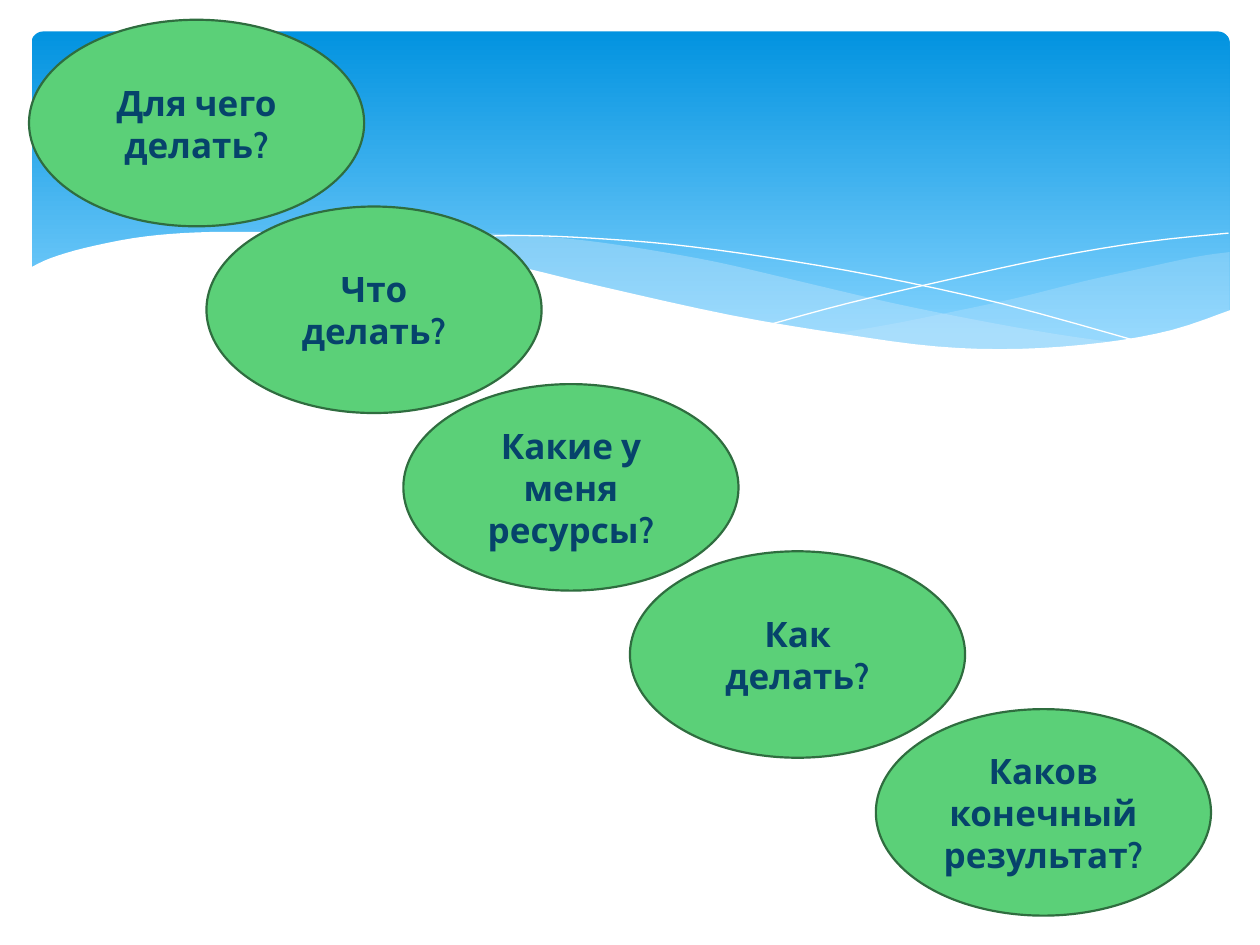
from dataclasses import dataclass
from itertools import chain

from lxml import etree
from pptx import Presentation, util as u
from pptx.dml.color import RGBColor
from pptx.enum import shapes, text
from pptx.oxml.ns import qn

COLORS = {
    "sky_top": "0293E0",
    "sky_bottom": "83D3FE",
    "haze": "C6E7FC",
    "white": "FFFFFF",
    "bubble": "5BD078",
    "outline": "2F6D3F",
    "ink": "06436B",
}
BUBBLE_WIDTH, BUBBLE_HEIGHT = 191.5, 118
CURVE_STEPS = 4

Point = tuple[float, float]
Curve = list[Point]


@dataclass
class Wave:
    curves: list[Curve]
    color: str
    opacity: int = 100


@dataclass
class Question:
    left: float
    top: float
    words: str


WAVES = [
    Wave([
        [(702.7, 144), (682.6, 146.9), (652.3, 153.4), (619.9, 160.6),
         (579.6, 170.6), (542.2, 178.6), (508.3, 185.4), (475.9, 190.8)],
        [(475.9, 190.8), (507.6, 195.1), (545, 198.7), (586.1, 200.2),
         (627.8, 198.7), (662.9, 192.2), (683.3, 185), (702.7, 177.8)],
    ], "haze", 29),
    Wave([
        [(643, 196.6), (602.6, 190.8), (558, 182.9), (508.3, 172.8),
         (452.9, 159.8), (409.7, 149.8), (370, 142.6), (334.8, 137.5),
         (302.4, 134.6), (273.6, 133.2), (247.7, 133.9), (225.4, 136.1), (205.9, 137.5)],
        [(205.9, 137.5), (246.2, 143.3), (290.9, 151.9), (323.3, 159.8),
         (381.6, 172.8), (432.7, 183.6), (478.8, 191.5), (519.8, 197.3),
         (556.6, 199.4), (589, 200.2), (617, 199.4), (643, 196.6)],
    ], "haze", 40),
]
STRANDS = [
    [(222.5, 140.4), (241.2, 137.5), (269.3, 135.4), (299.5, 134.6), (337.7, 136.1),
     (383.8, 139.7), (437.8, 146.9), (500.4, 157.7), (572.4, 173.5), (653, 195.8)],
    [(441.4, 185), (483.8, 173.5), (538.6, 160.6),
     (601.9, 146.9), (654.5, 138.2), (702, 133.2)],
]
FOREGROUND = Wave([
    [(703.4, 177.1), (669.6, 188.6), (630, 195.8), (582.5, 199.4), (535, 198),
     (481, 190.8), (416.9, 180), (342, 163.4), (281.5, 149), (227.5, 139.7),
     (180, 133.9), (139, 132.5), (105.1, 133.2), (76.3, 136.1),
     (48.2, 141.8), (28.8, 147.6), (16.6, 153.4)],
    [(16.6, 236.9), (703.4, 236.9)],
], "white")
QUESTIONS = [
    Question(16.6, 11.3, "Для чего делать?"),
    Question(118, 118, "Что делать?"),
    Question(230.5, 219.5, "Какие у меня ресурсы?"),
    Question(360, 315, "Как делать?"),
    Question(500.5, 405.2, "Каков конечный результат?"),
]


def rgb(name: str) -> RGBColor:
    return RGBColor.from_string(COLORS[name])


def paint(shape, name: str) -> None:
    shape.fill.solid()
    shape.fill.fore_color.rgb = rgb(name)


def smooth(curve: Curve) -> Curve:
    padded = [curve[0], *curve, curve[-1]]
    result = [curve[0]]
    for a, b, c, d in zip(padded, padded[1:], padded[2:], padded[3:]):
        for step in range(1, CURVE_STEPS + 1):
            t = step / CURVE_STEPS
            result.append(tuple(
                q + 0.5 * t * (r - p + t * (2 * p - 5 * q + 4 * r - s + t * (3 * (q - r) + s - p)))
                for p, q, r, s in zip(a, b, c, d)))
    return result


def draw_outline(slide, curves: list[Curve], close: bool):
    points = [(u.Pt(x), u.Pt(y)) for x, y in chain.from_iterable(map(smooth, curves))]
    builder = slide.shapes.build_freeform(*points[0])
    builder.add_line_segments(points[1:], close=close)
    shape = builder.convert_to_shape()
    shape.shadow.inherit = False
    return shape


def draw_wave(slide, wave: Wave) -> None:
    shape = draw_outline(slide, wave.curves, True)
    paint(shape, wave.color)
    shape.line.fill.background()
    if wave.opacity < 100:
        color = shape._element.spPr.find(qn("a:solidFill"))[0]
        etree.SubElement(color, qn("a:alpha")).set("val", str(wave.opacity * 1000))


def draw_strand(slide, curve: Curve) -> None:
    shape = draw_outline(slide, [curve], False)
    shape.fill.background()
    shape.line.color.rgb = rgb("white")
    shape.line.width = u.Pt(0)


def draw_sky(slide) -> None:
    sky = slide.shapes.add_shape(shapes.MSO_SHAPE.ROUNDED_RECTANGLE,
                                 u.Pt(18), u.Pt(18), u.Pt(684.7), u.Pt(194.4))
    sky.adjustments[0] = 0.034
    sky.shadow.inherit = False
    sky.line.fill.background()
    sky.fill.gradient()
    sky.fill.gradient_angle = 270
    stops = zip(sky.fill.gradient_stops, (0, 0.9), ("sky_top", "sky_bottom"))
    for stop, position, name in stops:
        stop.position = position
        stop.color.rgb = rgb(name)


def draw_question(slide, question: Question) -> None:
    bubble = slide.shapes.add_shape(shapes.MSO_SHAPE.OVAL, u.Pt(question.left), u.Pt(question.top),
                                    u.Pt(BUBBLE_WIDTH), u.Pt(BUBBLE_HEIGHT))
    bubble.shadow.inherit = False
    paint(bubble, "bubble")
    bubble.line.color.rgb = rgb("outline")
    bubble.line.width = u.Pt(1.25)
    frame = bubble.text_frame
    frame.text = question.words
    frame.word_wrap = True
    frame.vertical_anchor = text.MSO_ANCHOR.MIDDLE
    paragraph = frame.paragraphs[0]
    paragraph.alignment = text.PP_ALIGN.CENTER
    font = paragraph.runs[0].font
    font.name, font.size, font.bold = "Cabin", u.Pt(20), True
    font.color.rgb = rgb("ink")


def main() -> None:
    presentation = Presentation()
    presentation.slide_width, presentation.slide_height = u.Pt(720), u.Pt(540)
    slide = presentation.slides.add_slide(presentation.slide_layouts[6])
    draw_sky(slide)
    for wave in WAVES:
        draw_wave(slide, wave)
    for strand in STRANDS:
        draw_strand(slide, strand)
    draw_wave(slide, FOREGROUND)
    for question in QUESTIONS:
        draw_question(slide, question)
    presentation.save("out.pptx")


if __name__ == "__main__":
    main()
